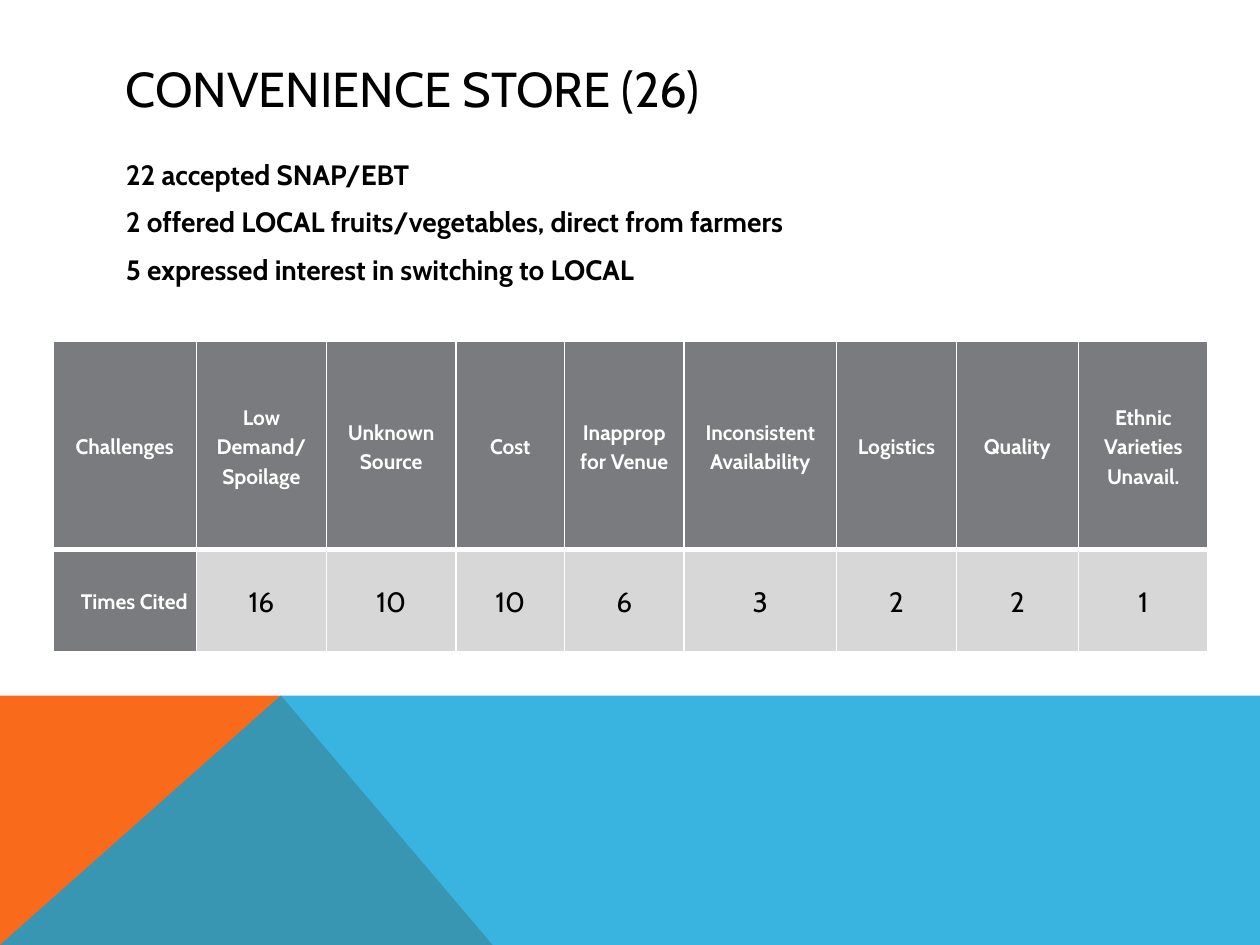
from lxml import etree
from pptx import Presentation
from pptx import util as u
from pptx.dml.color import RGBColor
from pptx.enum import text
from pptx.oxml import ns

BLACK = RGBColor(0x00, 0x00, 0x00)
WHITE = RGBColor(0xFF, 0xFF, 0xFF)
GREY = RGBColor(0x79, 0x7B, 0x7E)
PALE_GREY = RGBColor(0xD7, 0xD7, 0xD8)
ORANGE = RGBColor(0xF9, 0x6A, 0x1B)
BLUE = RGBColor(0x08, 0xA1, 0xD9)
FONT = "Cabin"


def write(frame, lines, size=16, color=BLACK, bold=False, align=None,
          before=0, spacing=None):
    """Fill a text frame with one paragraph per line."""
    for index, line in enumerate(lines):
        para = frame.add_paragraph() if index else frame.paragraphs[0]
        para.alignment = align
        para.space_before = u.Pt(before)
        para.line_spacing = spacing
        span = para.add_run()
        span.text = line
        span.font.name = FONT
        span.font.size = u.Pt(size)
        span.font.bold = bold
        span.font.color.rgb = color


class SlideBuilder:
    def __init__(self, page):
        self.page = page

    def polygon(self, points, color, opacity=100):
        corners = [(u.Inches(x), u.Inches(y)) for x, y in points]
        builder = self.page.shapes.build_freeform(*corners[0])
        builder.add_line_segments(corners[1:], close=True)
        shape = builder.convert_to_shape()
        shape.shadow.inherit = False
        shape.line.fill.background()
        shape.fill.solid()
        shape.fill.fore_color.rgb = color
        if opacity < 100:
            fill = shape._element.spPr.find(ns.qn("a:solidFill"))
            etree.SubElement(fill[0], ns.qn("a:alpha"), val=str(opacity * 1000))

    def textbox(self, left, top, width, height, lines,
                anchor=text.MSO_ANCHOR.TOP, **style):
        box = self.page.shapes.add_textbox(
            u.Inches(left), u.Inches(top), u.Inches(width), u.Inches(height))
        box.text_frame.word_wrap = True
        box.text_frame.vertical_anchor = anchor
        write(box.text_frame, lines, **style)

    def table(self, left, top, widths, heights):
        grid = self.page.shapes.add_table(
            len(heights), len(widths), u.Inches(left), u.Inches(top),
            u.Inches(sum(widths)), u.Inches(sum(heights))).table
        for column, width in zip(grid.columns, widths):
            column.width = u.Inches(width)
        for row, height in zip(grid.rows, heights):
            row.height = u.Inches(height)
        return grid

    def cell(self, cell, lines, fill, bottom=1, **style):
        cell.margin_left = cell.margin_right = u.Inches(0.07)
        cell.margin_top = cell.margin_bottom = 0
        cell.vertical_anchor = text.MSO_ANCHOR.MIDDLE
        write(cell.text_frame, lines, spacing=1.15, **style)
        # Borders must come before the fill
        properties = cell._tc.get_or_add_tcPr()
        for side, width in (("L", 1), ("R", 1), ("T", 1), ("B", bottom)):
            line = etree.SubElement(properties, ns.qn(f"a:ln{side}"),
                                    w=str(u.Pt(width)))
            solid = etree.SubElement(line, ns.qn("a:solidFill"))
            etree.SubElement(solid, ns.qn("a:srgbClr"), val=str(WHITE))
        cell.fill.solid()
        cell.fill.fore_color.rgb = fill


def main():
    deck = Presentation()
    deck.slide_width, deck.slide_height = u.Inches(10), u.Inches(7.5)
    slide = SlideBuilder(deck.slides.add_slide(deck.slide_layouts[6]))

    # Coloured band along the bottom
    band_top, peak = 5.52, 2.23
    slide.polygon([(0, 7.5), (0, band_top), (peak, band_top), (3.91, 7.5)],
                  ORANGE)
    slide.polygon([(0, 7.5), (peak, band_top), (10, band_top), (10, 7.5)],
                  BLUE, opacity=80)

    # Title and key facts
    slide.textbox(0.9, 0.4, 8.22, 0.6, ["CONVENIENCE STORE (26)"], size=28,
                  anchor=text.MSO_ANCHOR.MIDDLE)
    slide.textbox(0.9, 1.2, 8.22, 3.91, [
        "22 accepted SNAP/EBT",
        "2 offered LOCAL fruits/vegetables, direct from farmers",
        "5 expressed interest in switching to LOCAL",
    ], bold=True, before=8)

    # Challenges table: heading, times cited, column width
    challenges = [
        (["Challenges"], "Times Cited", 1.14),
        (["Low Demand/", "Spoilage"], "16", 1.03),
        (["Unknown Source"], "10", 1.03),
        (["Cost"], "10", 0.86),
        (["Inapprop for Venue"], "6", 0.95),
        (["Inconsistent Availability"], "3", 1.21),
        (["Logistics"], "2", 0.95),
        (["Quality"], "2", 0.97),
        (["Ethnic Varieties Unavail."], "1", 1.03),
    ]
    center, right = text.PP_ALIGN.CENTER, text.PP_ALIGN.RIGHT
    label = dict(size=12, color=WHITE, bold=True)
    grid = slide.table(0.42, 2.71, [width for _, _, width in challenges],
                       [1.65, 0.81])
    for column, (heading, cited, _) in enumerate(challenges):
        slide.cell(grid.cell(0, column), heading, GREY, bottom=3,
                   align=center, **label)
        count = grid.cell(1, column)
        if column == 0:
            slide.cell(count, [cited], GREY, align=right, **label)
        else:
            slide.cell(count, [cited], PALE_GREY, align=center)

    deck.save("out.pptx")


if __name__ == "__main__":
    main()
